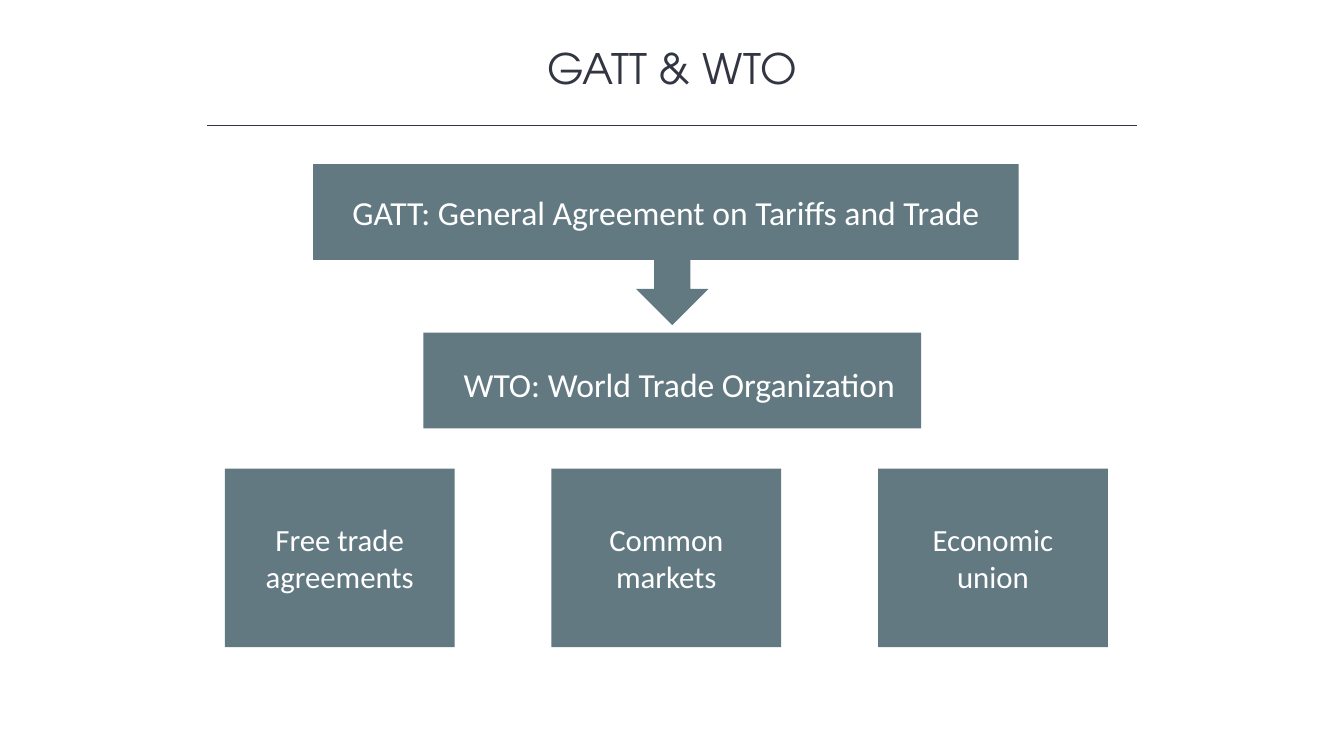
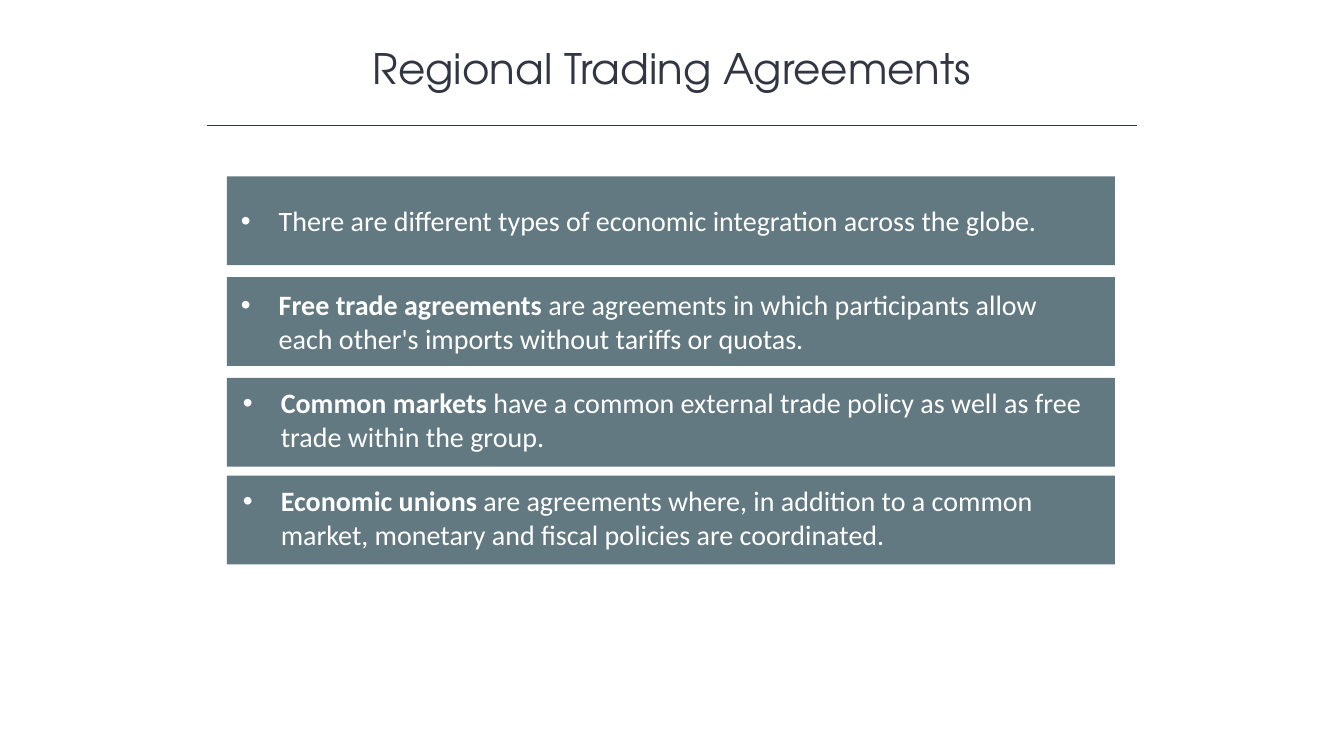
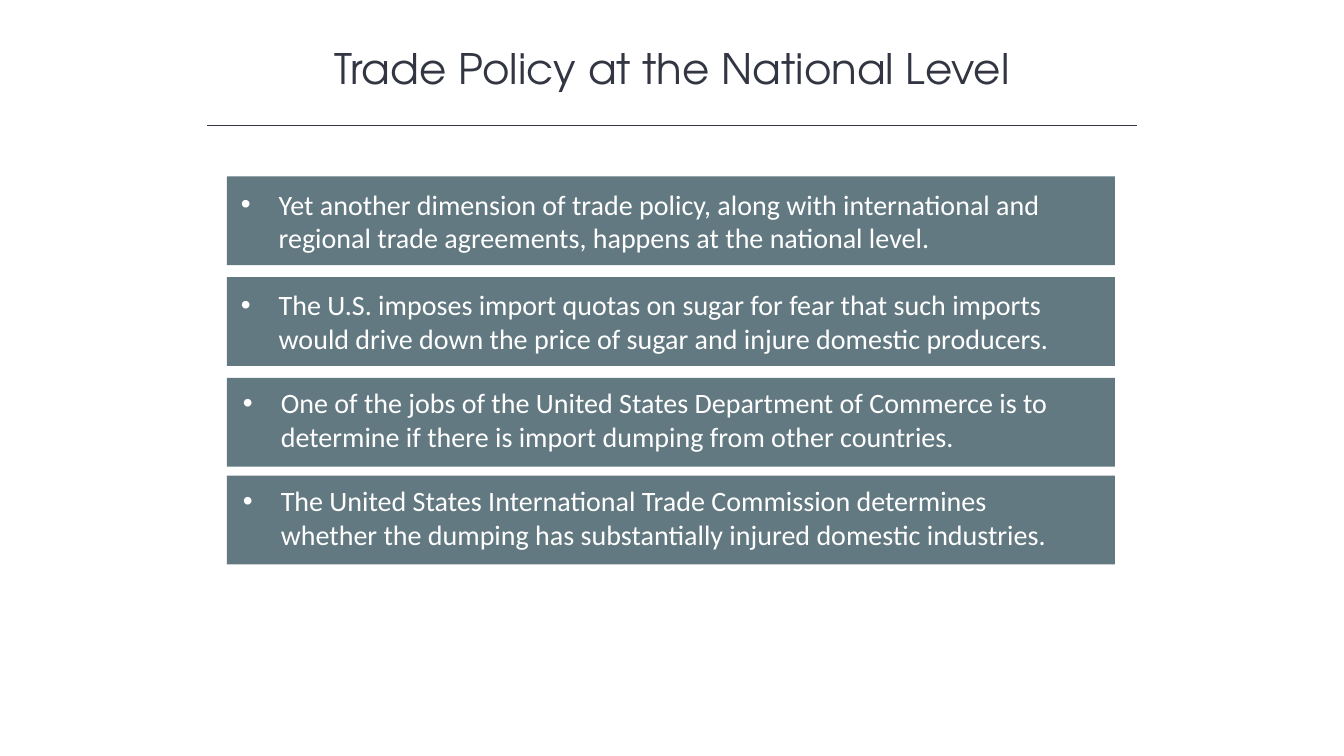
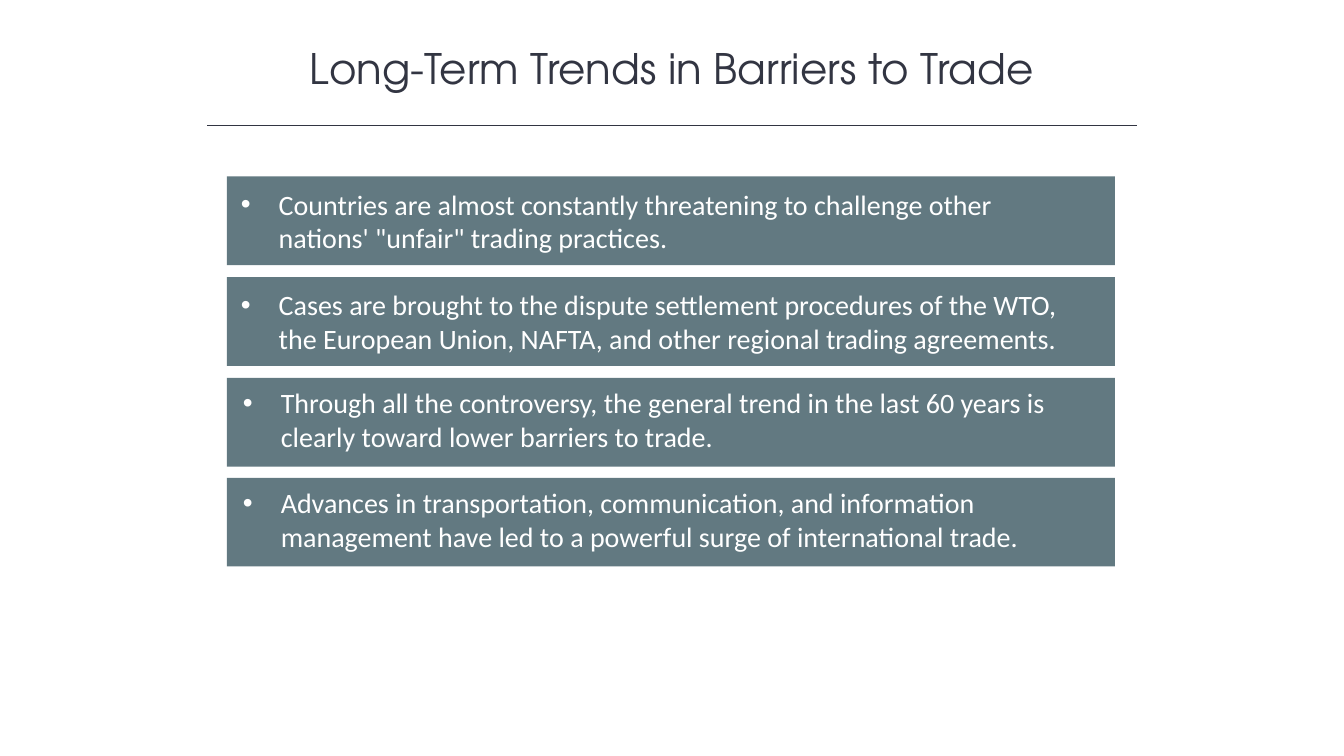
import pptx
import pptx.util
import pptx.dml.color
import pptx.enum.shapes
import pptx.enum.text
import pptx.oxml.ns
import lxml.etree

INK, SLATE, WHITE = "323542", "627981", "FFFFFF"
HEAD, BODY = "TeX Gyre Adventor", "Calibri"
Pt = pptx.util.Pt
Kind = pptx.enum.shapes.MSO_SHAPE
Align = pptx.enum.text.PP_ALIGN
Anchor = pptx.enum.text.MSO_ANCHOR
qn = pptx.oxml.ns.qn

deck = pptx.Presentation()
deck.slide_width = pptx.util.Inches(13.33)
deck.slide_height = pptx.util.Inches(7.5)
COL = deck.slide_width / 100
ROW = deck.slide_height / 100


def hue(code):
    return pptx.dml.color.RGBColor.from_string(code)


def block(slide, kind, spot, runs=(), size=20, pads=(7, 4, 7, 4), dot=False):
    left, top, wide, high = spot
    shape = slide.shapes.add_shape(
        kind, int(left * COL), int(top * ROW), int(wide * COL), int(high * ROW))
    shape.shadow.inherit = False
    shape.fill.solid()
    shape.fill.fore_color.rgb = hue(SLATE)
    shape.line.fill.background()
    frame = shape.text_frame
    frame.word_wrap = True
    frame.vertical_anchor = Anchor.MIDDLE
    frame.margin_left, frame.margin_top, frame.margin_right, frame.margin_bottom = map(Pt, pads)
    para = frame.paragraphs[0]
    para.alignment = Align.LEFT if dot else Align.CENTER
    if dot:
        props = para._p.get_or_add_pPr()
        props.set("marL", str(Pt(27)))
        props.set("indent", str(-Pt(27)))
        lxml.etree.SubElement(props, qn("a:buFont")).set("typeface", "Arial")
        lxml.etree.SubElement(props, qn("a:buChar")).set("char", "•")
    for words, bold in runs:
        run = para.add_run()
        run.text = words
        run.font.name = BODY
        run.font.size = Pt(size)
        run.font.bold = bold
        run.font.color.rgb = hue(WHITE)


pages = [
    ("GATT & WTO", 0, []),
    ("Regional Trading Agreements", 62.93, [
        [("There are different types of economic integration across the globe.", False)],
        [("Free trade agreements ", True),
         ("are agreements in which participants allow each other's imports without tariffs or quotas.", False)],
        [("Common markets ", True),
         ("have a common external trade policy as well as free trade within the group.", False)],
        [("Economic unions", True),
         (" are agreements where, in addition to a common market, monetary and fiscal policies are coordinated.", False)],
    ]),
    ("Trade Policy at the National Level", 62.93, [
        [("Yet another dimension of trade policy, along with international and regional trade agreements, happens at the national level.", False)],
        [("The U.S. imposes import quotas on sugar for fear that such imports would drive down the price of sugar and injure domestic producers.", False)],
        [("One of the jobs of the United States Department of Commerce is to determine if there is import dumping from other countries.", False)],
        [("The United States International Trade Commission determines whether the dumping has substantially injured domestic industries.", False)],
    ]),
    ("Long-Term Trends in Barriers to Trade", 63.2, [
        [("Countries are almost constantly threatening to challenge other nations' \"unfair\" trading practices.", False)],
        [("Cases are brought to the dispute settlement procedures of the WTO, the European Union, NAFTA, and other regional trading agreements.", False)],
        [("Through all the controversy, the general trend in the last 60 years is clearly toward lower barriers to trade.", False)],
        [("Advances in transportation, communication, and information management have led to a powerful surge of international trade.", False)],
    ]),
]

for name, last, bars in pages:
    slide = deck.slides.add_slide(deck.slide_layouts[5])
    title = slide.shapes.title
    title.left, title.top = int(12.5 * COL), int(4.93 * ROW)
    title.width, title.height = int(75 * COL), int(8.13 * ROW)
    frame = title.text_frame
    frame.word_wrap = True
    frame.auto_size = pptx.enum.text.MSO_AUTO_SIZE.SHAPE_TO_FIT_TEXT
    frame.vertical_anchor = Anchor.TOP
    para = frame.paragraphs[0]
    para.alignment = Align.CENTER
    run = para.add_run()
    run.text = name
    run.font.name = HEAD
    run.font.size = Pt(30)
    run.font.color.rgb = hue(INK)

    rule = slide.shapes.add_connector(
        pptx.enum.shapes.MSO_CONNECTOR.STRAIGHT,
        int(15.43 * COL), int(16.57 * ROW), int(84.6 * COL), int(16.57 * ROW))
    rule.line.color.rgb = hue(INK)
    rule.line.width = Pt(1)
    lxml.etree.SubElement(rule._element.spPr, qn("a:effectLst"))

    for step, runs in enumerate(bars):
        top = last if step == 3 else 23.33 + step * 13.33
        pads = (10, 4, 24, 4) if step < 2 else (11.5, 2, 22, 6)
        block(slide, Kind.RECTANGLE, (16.88, top, 66.08, 11.73), runs, pads=pads, dot=True)

first = deck.slides[0]
block(first, Kind.RECTANGLE, (23.3, 21.7, 52.5, 12.67),
      [("GATT: General Agreement on Tariffs and Trade", False)], 24)
block(first, Kind.RECTANGLE, (31.5, 44, 37.05, 12.67),
      [("WTO: World Trade Organization", False)], 24, (28, 9, 18, 4))
block(first, Kind.DOWN_ARROW, (47.32, 32.2, 5.4, 10.8))
for step, words in enumerate(["Free trade agreements", "Common markets", "Economic union"]):
    block(first, Kind.RECTANGLE, (16.73 + step * 24.3, 62, 17.1, 23.6),
          [(words, False)], 22, (24, 4, 24, 4))

deck.save("out.pptx")
